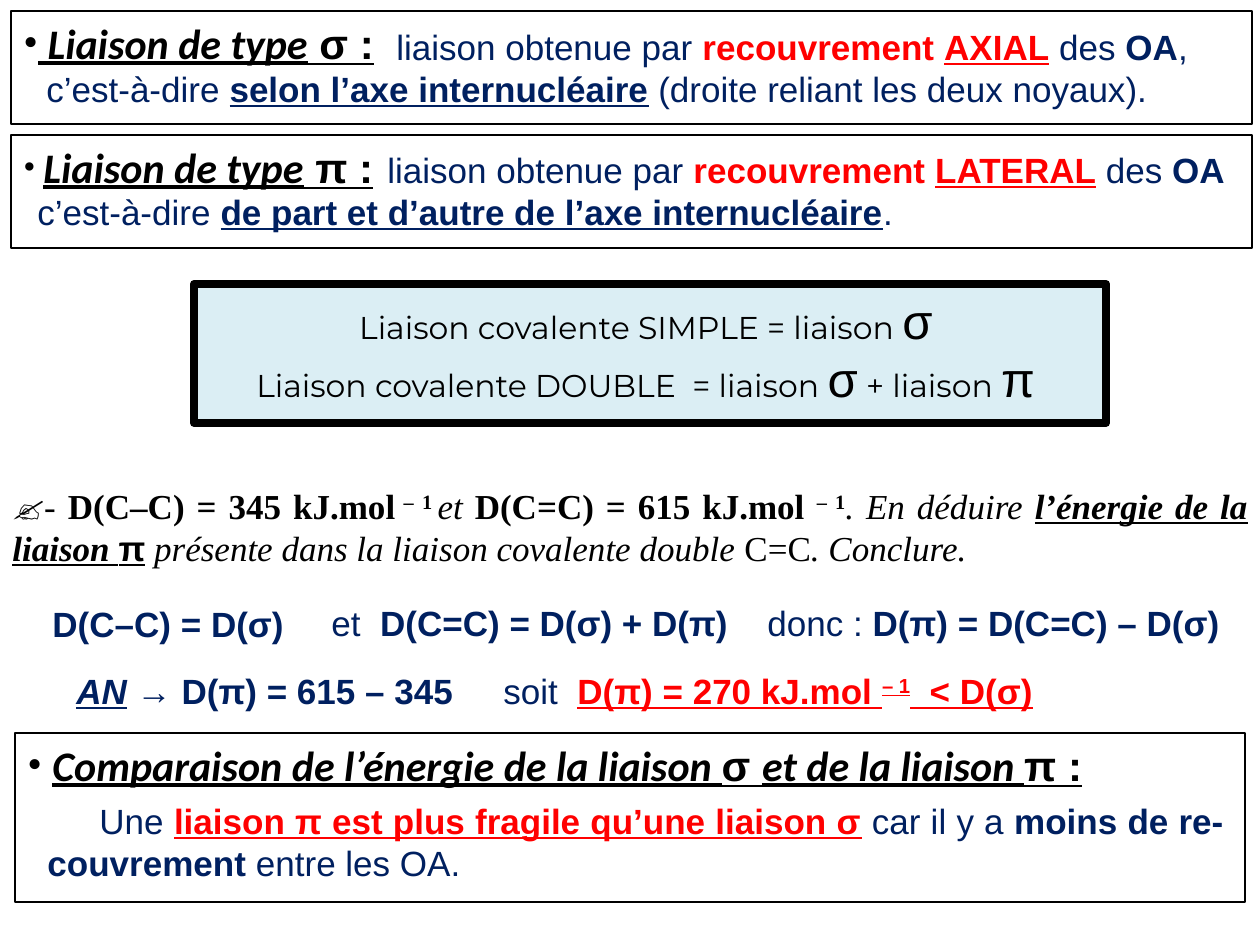
from lxml.etree import SubElement
from pptx import Presentation
from pptx.dml.color import RGBColor
from pptx.enum.shapes import MSO_SHAPE as SHAPE
from pptx.enum.text import MSO_ANCHOR as ANCHOR, PP_ALIGN as ALIGN
from pptx.oxml.ns import qn
from pptx.util import Pt

PX = 914400 / 126
BLACK = RGBColor(0, 0, 0)
WHITE = RGBColor(255, 255, 255)
NAVY = RGBColor(0, 0x20, 0x60)
RED = RGBColor(255, 0, 0)
PALE = RGBColor(0xDB, 0xEE, 0xF4)

prs = Presentation()
prs.slide_width, prs.slide_height = int(1260 * PX), int(945 * PX)
s = prs.slides.add_slide(prs.slide_layouts[6])


def add_text(p, runs, font, size, color):
    for text, flags, *style in runs:
        r = p.add_run()
        r.text = text
        f = r.font
        f.name, f.size, f.color.rgb = font, Pt(size), color
        f.bold, f.italic, f.underline = "b" in flags, "i" in flags, "u" in flags
        if "s" in flags:
            r._r.get_or_add_rPr().set("baseline", "30000")
        for value in style:
            if isinstance(value, RGBColor):
                f.color.rgb = value
            elif isinstance(value, str):
                f.name = value
            else:
                f.size = Pt(value)


def add_block(box, fill=None, line=1.5):
    x, y, w, h = [int(v * PX) for v in box]
    if fill is None:
        sp = s.shapes.add_textbox(x, y, w, h)
    else:
        sp = s.shapes.add_shape(SHAPE.RECTANGLE, x, y, w, h)
        sp.shadow.inherit = False
        sp.fill.solid()
        sp.fill.fore_color.rgb = fill
        sp.line.color.rgb = BLACK
        sp.line.width = Pt(line)
    tf = sp.text_frame
    tf.word_wrap = True
    tf.vertical_anchor = ANCHOR.TOP
    return tf


headings = [
    ((15, 733, 1230, 169), 25, 100, [
        ("Comparaison de l’énergie de la liaison ", "biu"), ("σ ", "bu", "Arial"),
        ("et de la liaison ", "biu"), ("π :", "bu", "Arial")]),
    ((11, 11, 1241, 113), 14, 100, [
        (" Liaison de type", "biu"), (" σ :", "bu", "Arial")]),
    ((11, 135, 1241, 113), 20, 83, [
        ("Liaison de type", "biu"), (" π :", "bu", "Arial")]),
]
for box, hang, bullet_size, runs in headings:
    p = add_block(box, WHITE).paragraphs[0]
    p.alignment = ALIGN.JUSTIFY
    p.space_after = Pt(10)
    pPr = p._p.get_or_add_pPr()
    pPr.set("marL", str(int(hang * PX)))
    pPr.set("indent", str(int(-hang * PX)))
    SubElement(pPr, qn("a:buSzPct")).set("val", str(bullet_size * 1000))
    SubElement(pPr, qn("a:buFont")).set("typeface", "Times New Roman")
    SubElement(pPr, qn("a:buChar")).set("char", "•")
    add_text(p, runs, "Calibri", 24, BLACK)

tf = add_block((194, 284, 912, 139), PALE, 4.5)
equations = [
    [("Liaison covalente SIMPLE = liaison ", ""), ("σ", "", "Arial", 28), (" ", "")],
    [("Liaison covalente DOUBLE  = liaison ", ""), ("σ", "", "Arial", 28),
     (" + liaison ", ""), ("π", "", "Arial", 28),
     ("\u00a0", "i", "Times New Roman", 20)],
]
for i, runs in enumerate(equations):
    p = tf.add_paragraph() if i else tf.paragraphs[0]
    p.alignment = ALIGN.CENTER
    add_text(p, runs, "Montserrat", 18, BLACK)

tf = add_block((0, 478, 1260, 97))
tf.vertical_anchor = ANCHOR.MIDDLE
p = tf.paragraphs[0]
p.alignment = ALIGN.JUSTIFY
add_text(p, [
    ("✍- ", ""), ("D(C–C) = 345 kJ.mol", "b"), (" – 1\u00a0", "bs"), ("et ", "i"),
    ("D(C=C) = 615 kJ.mol ", "b"), ("– 1", "bs"), (". En déduire ", "i"),
    ("l’énergie de la liaison ", "biu"), ("π", "bu", "Arial"),
    (" présente dans la liaison covalente double ", "i"), ("C=C", ""),
    (". Conclure.", "i")], "Times New Roman", 20, BLACK)

texts = [
    ((34, 19, 1235, 110), 350, ALIGN.LEFT, [
        ("liaison obtenue par ", ""), ("recouvrement ", "b", RED),
        ("AXIAL", "bu", RED), (" des ", ""), ("OA", "b"), (", c’est-à-dire ", ""),
        ("selon l’axe internucléaire", "bu"),
        (" (droite reliant les deux noyaux).", "")]),
    ((25, 142, 1235, 110), 350, ALIGN.LEFT, [
        ("liaison obtenue par ", ""), ("recouvrement ", "b", RED),
        ("LATERAL", "bu", RED), (" des ", ""), ("OA ", "b"), ("c’est-à-dire ", ""),
        ("de part et d’autre de l’axe internucléaire", "bu"), (".", "")]),
    ((40, 596, 323, 52), 0, ALIGN.LEFT, [("D(C–C) = D(σ)", "b")]),
    ((491, 663, 605, 52), 0, ALIGN.LEFT, [
        ("soit  ", ""), ("D(π) = 270 kJ.mol ", "bu", RED), ("– 1", "bus", RED),
        ("  < D(σ)", "bu", RED)]),
    ((748, 595, 486, 52), 7, ALIGN.LEFT, [
        ("donc : ", ""), ("D(π) = D(C=C) – D(σ)", "b")]),
    ((312, 595, 436, 52), 7, ALIGN.LEFT, [
        ("et  ", ""), ("D(C=C) = D(σ) + D(π)", "b")]),
    ((64, 663, 486, 52), 0, ALIGN.LEFT, [
        ("AN", "biu"), (" → ", ""), ("D(π) = 615 – 345", "b")]),
    ((35, 793, 1201, 97), 52, ALIGN.JUSTIFY, [
        ("Une ", ""), ("liaison π est plus fragile qu’une liaison σ", "bu", RED),
        (" car il y a ", ""), ("moins de re-couvrement ", "b"),
        ("entre les OA.", "")]),
]
for box, indent, align, runs in texts:
    p = add_block(box).paragraphs[0]
    p.alignment = align
    p._p.get_or_add_pPr().set("indent", str(int(indent * PX)))
    add_text(p, runs, "Arial", 20, NAVY)

prs.save("out.pptx")
